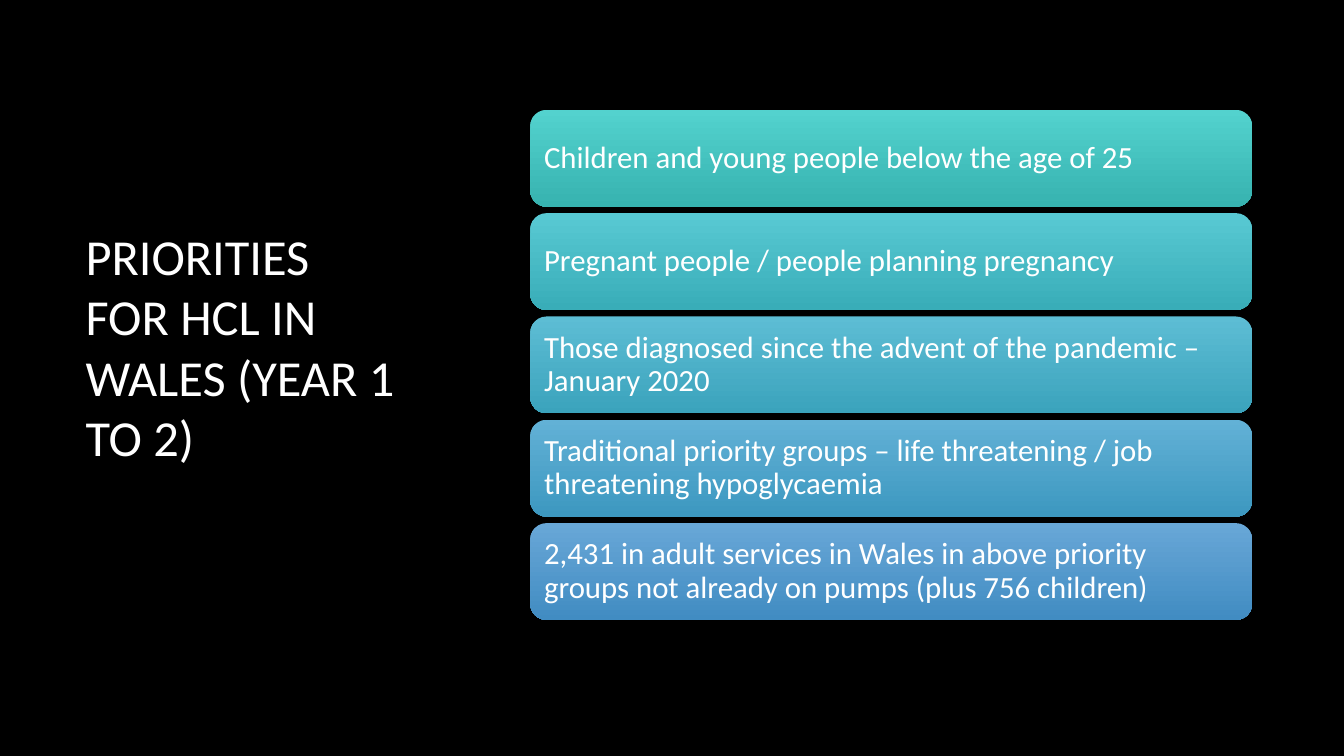
from pptx import Presentation
from pptx.dml.color import RGBColor
from pptx.enum.shapes import MSO_SHAPE
from pptx.enum.text import MSO_ANCHOR, PP_ALIGN
from pptx.util import Inches, Pt

COLORS = {
    "back": "000000",
    "text": "FFFFFF",
    "tops": ["53D2CE", "58C9D3", "5DBDD4", "62B1D6", "68A7D7"],
    "ends": ["37B3B0", "39ADB8", "3BA3BC", "3D98C0", "418CC2"],
}
GROUPS = [
    "Children and young people below the age of 25",
    "Pregnant people / people planning pregnancy",
    "Those diagnosed since the advent of the pandemic – January 2020",
    "Traditional priority groups – life threatening / job threatening hypoglycaemia",
    "2,431 in adult services in Wales in above priority groups not already on pumps (plus 756 children)",
]

# Card column: left edge, first row, row step and card size in inches
LEFT, TOP, STEP = 5.26, 1.09, 1.025
WIDE, HIGH, PAD = 7.16, 0.96, 0.09


def write(shape, text, size):
    frame = shape.text_frame
    frame.word_wrap = True
    frame.vertical_anchor = MSO_ANCHOR.MIDDLE
    para = frame.paragraphs[0]
    para.alignment = PP_ALIGN.LEFT
    run = para.add_run()
    run.text = text
    run.font.name = "Calibri"
    run.font.size = Pt(size)
    run.font.color.rgb = RGBColor.from_string(COLORS["text"])
    return frame


# Slide and background
deck = Presentation()
deck.slide_width, deck.slide_height = Inches(13.33), Inches(7.5)
slide = deck.slides.add_slide(deck.slide_layouts[6])
slide.background.fill.solid()
slide.background.fill.fore_color.rgb = RGBColor.from_string(COLORS["back"])

# Title
title = slide.shapes.add_textbox(Inches(0.75), Inches(0.7), Inches(3.31), Inches(5.46))
write(title, "PRIORITIES FOR HCL IN WALES (YEAR 1 TO 2)", 36)

# Priority cards, each shaded from top to bottom
for row, (group, *shades) in enumerate(zip(GROUPS, COLORS["tops"], COLORS["ends"])):
    card = slide.shapes.add_shape(
        MSO_SHAPE.ROUNDED_RECTANGLE,
        Inches(LEFT), Inches(TOP + row * STEP), Inches(WIDE), Inches(HIGH),
    )
    card.shadow.inherit = False
    card.line.fill.background()
    card.fill.gradient()
    card.fill.gradient_angle = 270
    for stop, shade, place in zip(card.fill.gradient_stops, shades, (0, 1)):
        stop.color.rgb = RGBColor.from_string(shade)
        stop.position = place
    frame = write(card, group, 22)
    frame.margin_left = frame.margin_right = Inches(PAD)
    frame.margin_top = frame.margin_bottom = Inches(PAD)
    frame.paragraphs[0].line_spacing = 0.9

deck.save("out.pptx")
